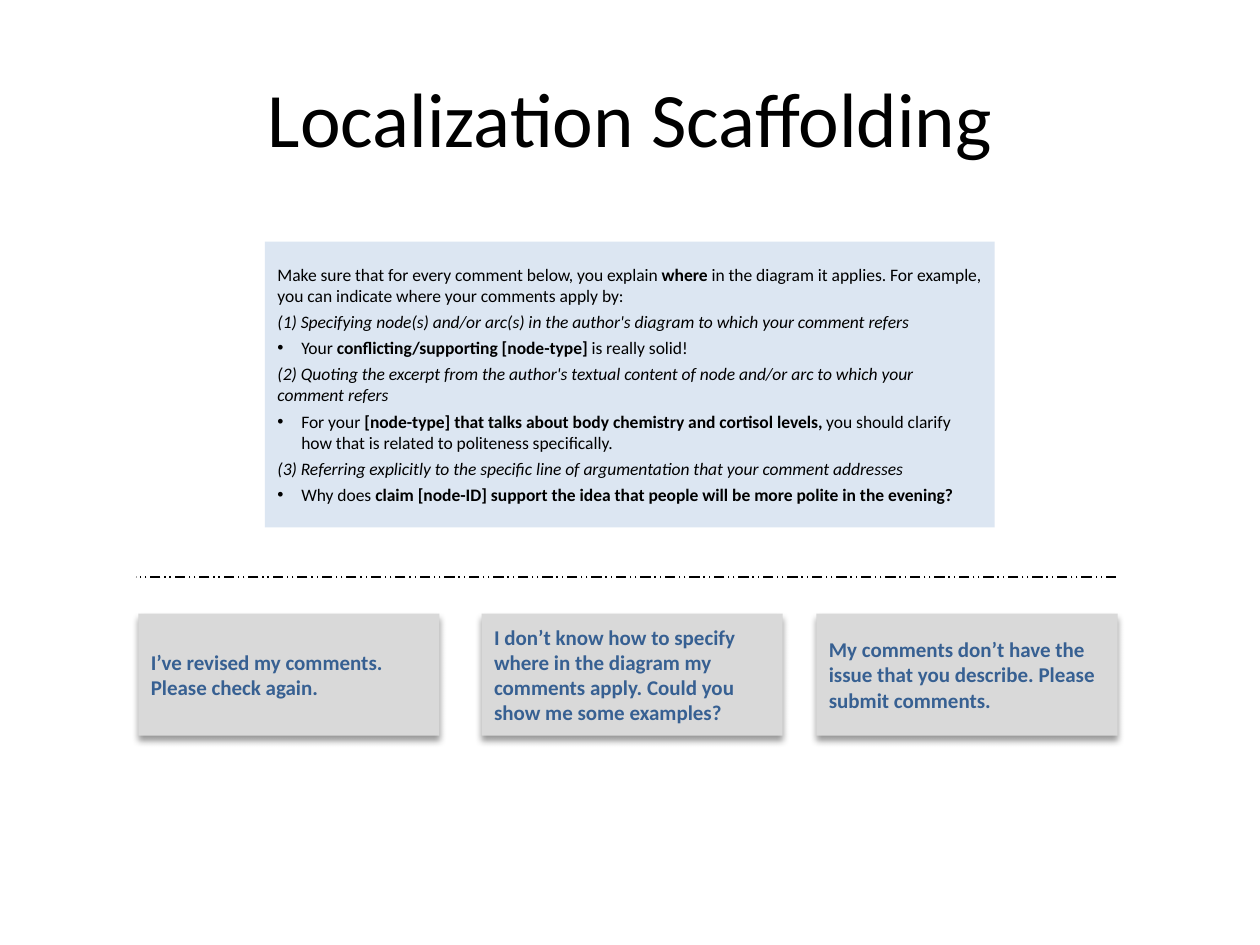
from lxml import etree
from pptx import Presentation, util as u
from pptx.dml.color import RGBColor
from pptx.enum import dml, shapes, text
from pptx.oxml import parse_xml
from pptx.oxml.ns import nsdecls, qn

TITLE = "Localization Scaffolding"

GUIDANCE = [
    ("lead", [
        ("Make sure that for every comment below, you explain ", False),
        ("where", True),
        (" in the diagram it applies. For example, you can indicate where your comments apply by:", False),
    ]),
    ("rule", [("(1) Specifying node(s) and/or arc(s) in the author's diagram to which your comment refers", False)]),
    ("example", [
        ("Your ", False),
        ("conflicting/supporting [node-type]", True),
        (" is really solid!", False),
    ]),
    ("rule", [("(2) Quoting the excerpt from the author's textual content of node and/or arc to which your comment refers", False)]),
    ("example", [
        ("For your ", False),
        ("[node-type] that talks about body chemistry and cortisol levels,", True),
        (" you should clarify how that is related to politeness specifically.", False),
    ]),
    ("rule", [("(3) Referring explicitly to the specific line of argumentation that your comment addresses", False)]),
    ("example", [
        ("Why does ", False),
        ("claim [node-ID] support the idea that people will be more polite in the evening?", True),
    ]),
]

REPLIES = [
    (2.79, "I’ve revised my comments. Please check again."),
    (9.71, "I don’t know how to specify where in the diagram my comments apply. Could you show me some examples?"),
    (16.46, "My comments don’t have the issue that you describe. Please submit comments."),
]

THEME = {
    "font": "Calibri",
    "ink": RGBColor(0x00, 0x00, 0x00),
    "panel": RGBColor(0xDC, 0xE6, 0xF2),
    "button": RGBColor(0xD9, 0xD9, 0xD9),
    "reply": RGBColor(0x37, 0x60, 0x92),
    "title_pt": 44,
    "body_pt": 10,
    "reply_pt": 12,
}

TITLE_BOX = (1.27, 0.76, 22.86, 3.18)
PANEL_BOX = (5.34, 4.87, 14.71, 5.76)
REPLY_TOP, REPLY_W, REPLY_H = 12.37, 6.07, 2.46
DIVIDER = (22.5, 11.63, 2.74, 11.63)
INDENT = u.Cm(0.48)

SHADOW = (
    f'<a:effectLst {nsdecls("a")}>'
    '<a:outerShdw blurRad="50800" dist="38100" dir="5400000" rotWithShape="0">'
    '<a:srgbClr val="000000"><a:alpha val="40000"/></a:srgbClr>'
    '</a:outerShdw></a:effectLst>'
)


def cm(values):
    return [u.Cm(v) for v in values]


def place(sp, box):
    sp.left, sp.top, sp.width, sp.height = cm(box)


def style(r, size, color, bold=False, italic=False):
    f = r.font
    f.name, f.size, f.bold, f.italic = THEME["font"], u.Pt(size), bold, italic
    f.color.rgb = color


def set_frame(sp):
    tf = sp.text_frame
    tf.word_wrap = True
    tf.auto_size = text.MSO_AUTO_SIZE.NONE
    tf.vertical_anchor = text.MSO_ANCHOR.MIDDLE
    return tf


def set_bullet(p, shown):
    pPr = p._p.get_or_add_pPr()
    pPr.set("marL", str(INDENT if shown else 0))
    pPr.set("indent", str(-INDENT if shown else 0))
    if shown:
        etree.SubElement(pPr, qn("a:buFont")).set("typeface", "Arial")
        etree.SubElement(pPr, qn("a:buChar")).set("char", "•")
    else:
        etree.SubElement(pPr, qn("a:buNone"))


def add_title(s):
    sp = s.shapes.title
    place(sp, TITLE_BOX)
    tf = set_frame(sp)
    tf.text = TITLE
    p = tf.paragraphs[0]
    p.alignment = text.PP_ALIGN.CENTER
    style(p.runs[0], THEME["title_pt"], THEME["ink"])


def add_guidance(s):
    sp = s.placeholders[1]
    place(sp, PANEL_BOX)
    sp.fill.solid()
    sp.fill.fore_color.rgb = THEME["panel"]
    tf = set_frame(sp)
    for i, (kind, parts) in enumerate(GUIDANCE):
        p = tf.add_paragraph() if i else tf.paragraphs[0]
        p.alignment = text.PP_ALIGN.LEFT
        p.space_before, p.space_after = u.Pt(0), u.Pt(3)
        set_bullet(p, kind == "example")
        for words, bold in parts:
            r = p.add_run()
            r.text = words
            style(r, THEME["body_pt"], THEME["ink"], bold, kind == "rule")


def add_reply(s, left, words):
    box = cm((left, REPLY_TOP, REPLY_W, REPLY_H))
    sp = s.shapes.add_shape(shapes.MSO_SHAPE.RECTANGLE, *box)
    sp.fill.solid()
    sp.fill.fore_color.rgb = THEME["button"]
    sp.line.fill.background()
    sp._element.spPr.append(parse_xml(SHADOW))
    tf = set_frame(sp)
    tf.text = words
    p = tf.paragraphs[0]
    p.alignment = text.PP_ALIGN.LEFT
    style(p.runs[0], THEME["reply_pt"], THEME["reply"], bold=True)


def add_divider(s):
    sp = s.shapes.add_connector(shapes.MSO_CONNECTOR.STRAIGHT, *cm(DIVIDER))
    sp.line.color.rgb = THEME["ink"]
    sp.line.width = u.Pt(0.75)
    sp.line.dash_style = dml.MSO_LINE.DASH_DOT_DOT
    etree.SubElement(sp._element.spPr, qn("a:effectLst"))


def main():
    prs = Presentation()
    prs.slide_width, prs.slide_height = cm((25.4, 19.05))
    s = prs.slides.add_slide(prs.slide_layouts[1])
    add_title(s)
    add_guidance(s)
    for left, words in REPLIES:
        add_reply(s, left, words)
    add_divider(s)
    prs.save("out.pptx")


if __name__ == "__main__":
    main()
